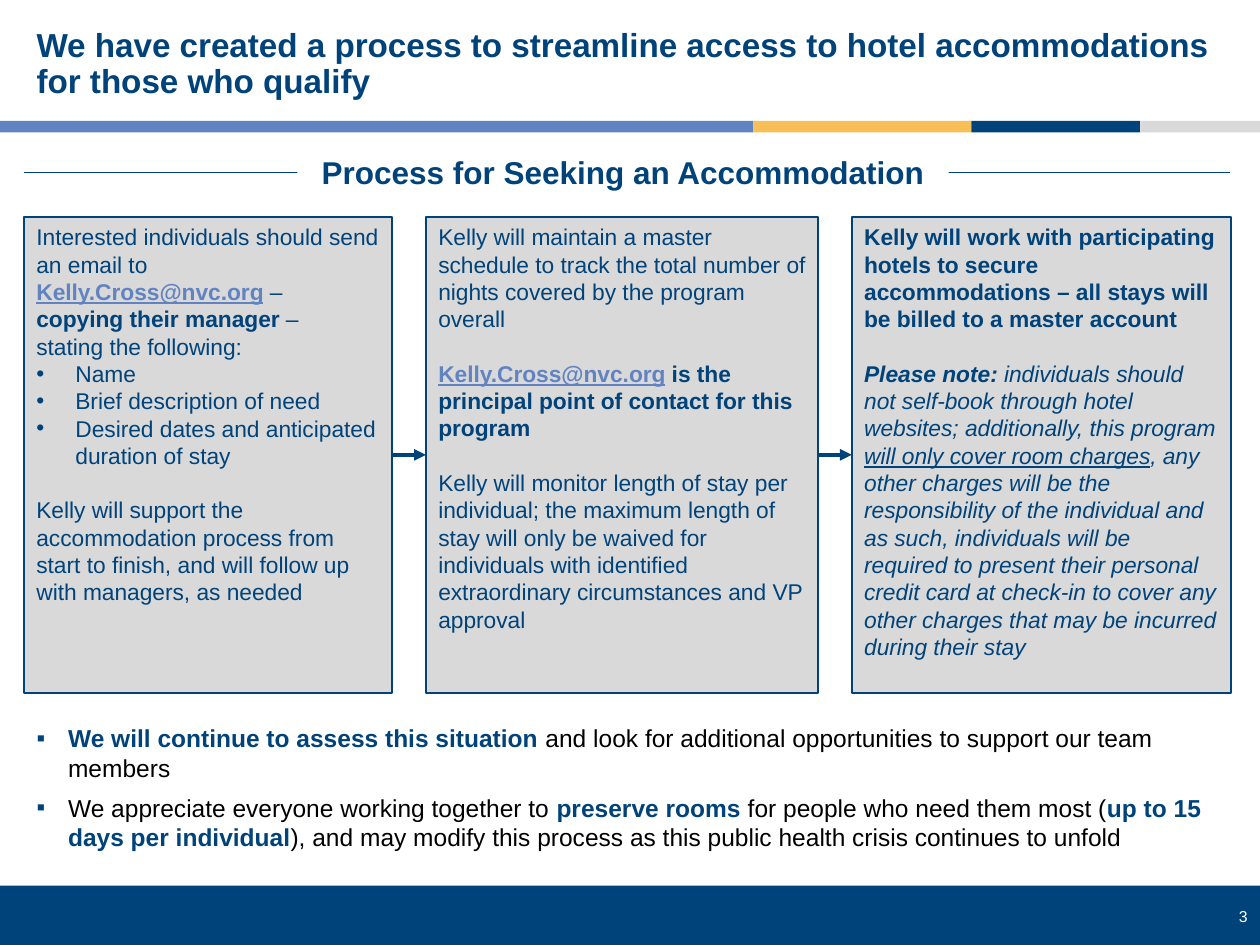
from lxml.etree import SubElement
from pptx import Presentation
from pptx.dml.color import RGBColor
from pptx.enum.shapes import MSO_CONNECTOR, MSO_SHAPE
from pptx.enum.text import MSO_ANCHOR, MSO_AUTO_SIZE, PP_ALIGN
from pptx.oxml.ns import qn
from pptx.util import Inches, Pt

NAVY = RGBColor(0x00, 0x43, 0x7B)
BLUE = RGBColor(0x62, 0x83, 0xC2)
GOLD = RGBColor(0xF8, 0xBF, 0x56)
GREY = RGBColor(0xD9, 0xD9, 0xD9)
WHITE = RGBColor(0xFF, 0xFF, 0xFF)
BLACK = RGBColor(0x00, 0x00, 0x00)

LEFT, WIDTH = 0.19, 9.57
STEP_TOP, STEP_HEIGHT = 1.72, 3.78
BLANK_LINE = 15.6
CONTACT = ("Kelly.Cross@nvc.org", "bu", BLUE)

STRIPES = [
    (0, 5.98, BLUE),
    (5.98, 1.73, GOLD),
    (7.71, 1.34, NAVY),
    (9.05, 0.95, GREY),
]

STEPS = [
    (0.19, 2.92, [
        ("", 0, [("Interested individuals should send an email to ",), CONTACT, (" –",)]),
        ("", 0, [("copying their manager ", "b"), ("–",)]),
        ("", 0, [("stating the following:",)]),
        ("•", 0, [("Name",)]),
        ("•", 0, [("Brief description of need",)]),
        ("•", 0, [("Desired dates and anticipated duration of stay",)]),
        ("", BLANK_LINE, [("Kelly will support the accommodation process from start to finish, "
                           "and will follow up with managers, as needed",)]),
    ]),
    (3.38, 3.11, [
        ("", 0, [("Kelly will maintain a master schedule to track the total number of "
                  "nights covered by the program overall",)]),
        ("", BLANK_LINE, [CONTACT, (" is the principal point of contact for this program", "b")]),
        ("", BLANK_LINE, [("Kelly will monitor length of stay per individual; the maximum length "
                           "of stay will only be waived for individuals with identified "
                           "extraordinary circumstances and VP approval",)]),
    ]),
    (6.76, 3.01, [
        ("", 0, [("Kelly will work with participating hotels to secure accommodations – "
                  "all stays will be billed to a master account", "b")]),
        ("", BLANK_LINE, [
            ("Please note: ", "bi"),
            ("individuals should not self-book through hotel websites; additionally, "
             "this program ", "i"),
            ("will only cover room charges", "iu"),
            (", any other charges will be the responsibility of the individual and as such, "
             "individuals will be required to present their personal credit card at check-in "
             "to cover any other charges that may be incurred during their stay", "i"),
        ]),
    ]),
]

CLOSING = [
    [("We will continue to assess this situation ", "b", NAVY),
     ("and look for additional opportunities to support our team members",)],
    [("We appreciate everyone working together to ",),
     ("preserve rooms ", "b", NAVY),
     ("for people who need them most (",),
     ("up to 15 days per individual", "b", NAVY),
     ("), and may modify this process as this public health crisis continues to unfold",)],
]


def place(shape, left, top, width, height):
    """Move and size a placeholder."""
    shape.left, shape.top = Inches(left), Inches(top)
    shape.width, shape.height = Inches(width), Inches(height)


def add_span(para, size, default_color, text, style="", color=None):
    """Add one run; style letters are b, i and u."""
    span = para.add_run()
    span.text = text
    font = span.font
    font.name, font.size = "Arial", Pt(size)
    font.bold, font.italic, font.underline = "b" in style, "i" in style, "u" in style
    font.color.rgb = color or default_color


def set_bullet(para, char, indent):
    """Give a paragraph a navy bullet with a hanging indent."""
    properties = para._p.get_or_add_pPr()
    properties.set("marL", str(Inches(indent)))
    properties.set("indent", str(-Inches(indent)))
    color = SubElement(properties, qn("a:buClr"))
    SubElement(color, qn("a:srgbClr"), val=str(NAVY))
    SubElement(properties, qn("a:buFont"), typeface="Arial")
    SubElement(properties, qn("a:buChar"), char=char)


def next_para(frame, index):
    """Return the first paragraph of a frame or a new one."""
    return frame.paragraphs[0] if index == 0 else frame.add_paragraph()


def add_bar(page, left, top, width, height, fill):
    """Add a filled rectangle without outline or shadow."""
    bar = page.shapes.add_shape(MSO_SHAPE.RECTANGLE, Inches(left), Inches(top),
                                Inches(width), Inches(height))
    bar.shadow.inherit = False
    bar.fill.solid()
    bar.fill.fore_color.rgb = fill
    bar.line.fill.background()
    return bar


def add_step(page, left, width, paragraphs):
    """Add one outlined process box with its text."""
    box = add_bar(page, left, STEP_TOP, width, STEP_HEIGHT, GREY)
    box.line.color.rgb = NAVY
    box.line.width = Pt(1)
    frame = box.text_frame
    frame.word_wrap = True
    frame.vertical_anchor = MSO_ANCHOR.TOP
    for index, (bullet, space, spans) in enumerate(paragraphs):
        para = next_para(frame, index)
        if bullet:
            set_bullet(para, bullet, 0.31)
        para.alignment = PP_ALIGN.LEFT
        para.space_before = Pt(space)
        for span in spans:
            add_span(para, 13, NAVY, *span)


def add_line(page, start, end, y, weight, arrow=False):
    """Add a horizontal navy line, with an arrowhead if wanted."""
    line = page.shapes.add_connector(MSO_CONNECTOR.STRAIGHT, Inches(start), Inches(y),
                                     Inches(end), Inches(y))
    line.line.color.rgb = NAVY
    line.line.width = Pt(weight)
    if arrow:
        SubElement(line.line._get_or_add_ln(), qn("a:tailEnd"), type="triangle")
    SubElement(line._element.spPr, qn("a:effectLst"))


def add_footer(page):
    """Add the footer band and the page number."""
    add_bar(page, 0, 7.03, 10, 0.47, NAVY)
    box = page.shapes.add_textbox(Inches(9.31), Inches(7.15), Inches(0.69), Inches(0.25))
    box.text_frame.word_wrap = True
    para = box.text_frame.paragraphs[0]
    para.alignment = PP_ALIGN.RIGHT
    add_span(para, 9, WHITE, "3")


def fill_title(title):
    """Place and write the slide title."""
    place(title, LEFT, 0.17, WIDTH, 0.69)
    frame = title.text_frame
    frame.auto_size = MSO_AUTO_SIZE.NONE
    frame.vertical_anchor = MSO_ANCHOR.MIDDLE
    para = frame.paragraphs[0]
    para.alignment = PP_ALIGN.LEFT
    para.line_spacing = 0.9
    add_span(para, 19, NAVY, "We have created a process to streamline access to hotel "
             "accommodations for those who qualify", "b")


def add_heading(page):
    """Add the section heading over its rule."""
    add_line(page, LEFT, LEFT + WIDTH, 1.37, 0.5)
    heading = add_bar(page, 2.36, 1.21, 5.17, 0.31, WHITE)
    heading.text_frame.vertical_anchor = MSO_ANCHOR.MIDDLE
    para = heading.text_frame.paragraphs[0]
    para.alignment = PP_ALIGN.CENTER
    add_span(para, 18, NAVY, "Process for Seeking an Accommodation", "b")


def fill_closing(body):
    """Place and write the closing bullets."""
    place(body, LEFT, 5.69, WIDTH, 1.23)
    body.text_frame.auto_size = MSO_AUTO_SIZE.NONE
    for index, spans in enumerate(CLOSING):
        para = next_para(body.text_frame, index)
        set_bullet(para, "▪", 0.25)
        para.space_before, para.space_after = Pt(0), Pt(6)
        for span in spans:
            add_span(para, 14, BLACK, *span)


def main():
    """Build the slide and save it."""
    deck = Presentation()
    deck.slide_width, deck.slide_height = Inches(10), Inches(7.5)
    page = deck.slides.add_slide(deck.slide_layouts[1])
    add_footer(page)
    for left, width, color in STRIPES:
        add_bar(page, left, 0.96, width, 0.09, color)
    fill_title(page.shapes.title)
    for step in STEPS:
        add_step(page, *step)
    for (left, width, _), (next_left, _, _) in zip(STEPS, STEPS[1:]):
        add_line(page, left + width, next_left, STEP_TOP + STEP_HEIGHT / 2, 2.25, arrow=True)
    add_heading(page)
    fill_closing(page.placeholders[1])
    deck.save("out.pptx")


if __name__ == "__main__":
    main()
